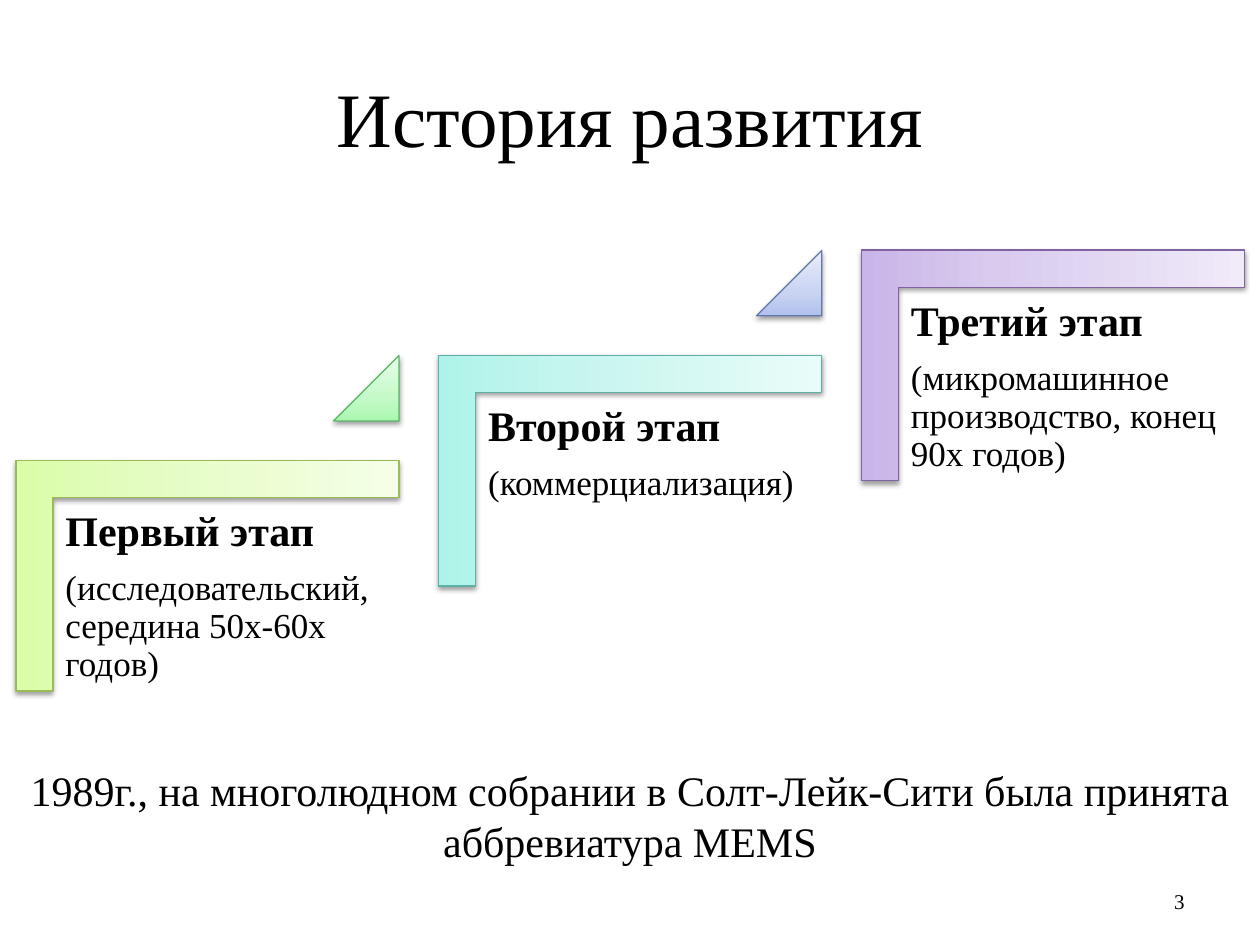
from copy import deepcopy

from lxml.etree import SubElement
from pptx import Presentation
from pptx.dml.color import RGBColor
from pptx.enum.shapes import MSO_SHAPE as Preset
from pptx.enum.text import MSO_ANCHOR as Anchor, PP_ALIGN as Align
from pptx.oxml.ns import qn
from pptx.util import Pt

FONT = "Times New Roman"
COLORS = {
    "text": "000000",
    "lime": ("DAFDA7", "E4FCC2", "F5FFE7", "9BBB59"),
    "green": ("AAF8B0", "C4F9C8", "E7FEE9", "5CB565"),
    "teal": ("AEF3E9", "C6F5EE", "E8FCF9", "5EAFA6"),
    "blue": ("B1C1ED", "C9D3F2", "E9EEFB", "6179A8"),
    "violet": ("C9B5E8", "D8CBEE", "F0EAF9", "8064A2"),
}
STAGES = [
    ("Первый этап", "(исследовательский, середина 50х-60х годов)", "lime", "green"),
    ("Второй этап", "(коммерциализация)", "teal", "blue"),
    ("Третий этап", "(микромашинное производство, конец 90х годов)", "violet", None),
]
STEP_X, STEP_Y = 241.6, -60.1


def add_text(page, bounds, lines, align=Align.LEFT, anchor=Anchor.TOP, inset=None):
    box = page.shapes.add_textbox(*map(Pt, bounds))
    frame = box.text_frame
    frame.word_wrap = True
    frame.vertical_anchor = anchor
    if inset is not None:
        frame.margin_left = frame.margin_right = Pt(inset)
        frame.margin_top = frame.margin_bottom = Pt(inset)
    frame.text = "\n".join(text for text, size, bold in lines)
    for para, (text, size, bold) in zip(frame.paragraphs, lines):
        para.alignment = align
        font = para.runs[0].font
        font.name, font.size, font.bold = FONT, Pt(size), bold
        font.color.rgb = RGBColor.from_string(COLORS["text"])
    return box


def add_shadow(shape):
    shape.shadow.inherit = False
    effects = shape._element.spPr.find(qn("a:effectLst"))
    shadow = SubElement(effects, qn("a:outerShdw"), blurRad=str(Pt(3.1)),
                        dist=str(Pt(1.6)), dir="5400000", rotWithShape="0")
    color = SubElement(shadow, qn("a:srgbClr"), val="000000")
    SubElement(color, qn("a:alpha"), val="38000")


def add_gradient_shape(page, preset, bounds, color, adjustments, rotation=0):
    shape = page.shapes.add_shape(preset, *map(Pt, bounds))
    shape.rotation = rotation
    for index, value in enumerate(adjustments):
        shape.adjustments[index] = value
    *tones, line = COLORS[color]
    shape.fill.gradient()
    shape.fill.gradient_angle = 90
    stops = shape._element.spPr.find(".//" + qn("a:gsLst"))
    stops.append(deepcopy(stops[-1]))
    for stop, tone, position in zip(shape.fill.gradient_stops, tones, (0, 0.35, 1)):
        stop.color.rgb = RGBColor.from_string(tone)
        stop.position = position
    shape.line.color.rgb = RGBColor.from_string(line)
    shape.line.width = Pt(0.75)
    add_shadow(shape)


def add_stage(page, index, heading, detail, color, arrow_color):
    dx, dy = index * STEP_X, index * STEP_Y
    add_gradient_shape(page, Preset.CORNER, (52.6 + dx, 219.6 + dy, 131.8, 218.9),
                       color, (0.161, 0.161), 90)
    box = add_text(page, (30.3 + dx, 284.6 + dy, 197.3, 172.8),
                   [(heading, 24, True), (detail, 20, False)], inset=7.2)
    for para in box.text_frame.paragraphs:
        para.line_spacing = 0.9
        para.space_after = Pt(8.4)
    if arrow_color:
        add_gradient_shape(page, Preset.ISOSCELES_TRIANGLE,
                           (190.6 + dx, 203.2 + dy, 37.4, 37.4), arrow_color, (1,))


def main():
    deck = Presentation()
    deck.slide_width, deck.slide_height = Pt(720), Pt(540)
    page = deck.slides.add_slide(deck.slide_layouts[6])
    add_text(page, (36, 21.6, 648, 90), [("История развития", 44, False)],
             Align.CENTER, Anchor.MIDDLE)
    for index, stage in enumerate(STAGES):
        add_stage(page, index, *stage)
    add_text(page, (0, 433.4, 720, 65.5),
             [("1989г., на многолюдном собрании в Солт-Лейк-Сити была принята "
               "аббревиатура MEMS", 24, False)], Align.CENTER)
    add_text(page, (516, 500.5, 168, 28.8), [("3", 12, False)],
             Align.RIGHT, Anchor.MIDDLE)
    deck.save("out.pptx")


if __name__ == "__main__":
    main()
